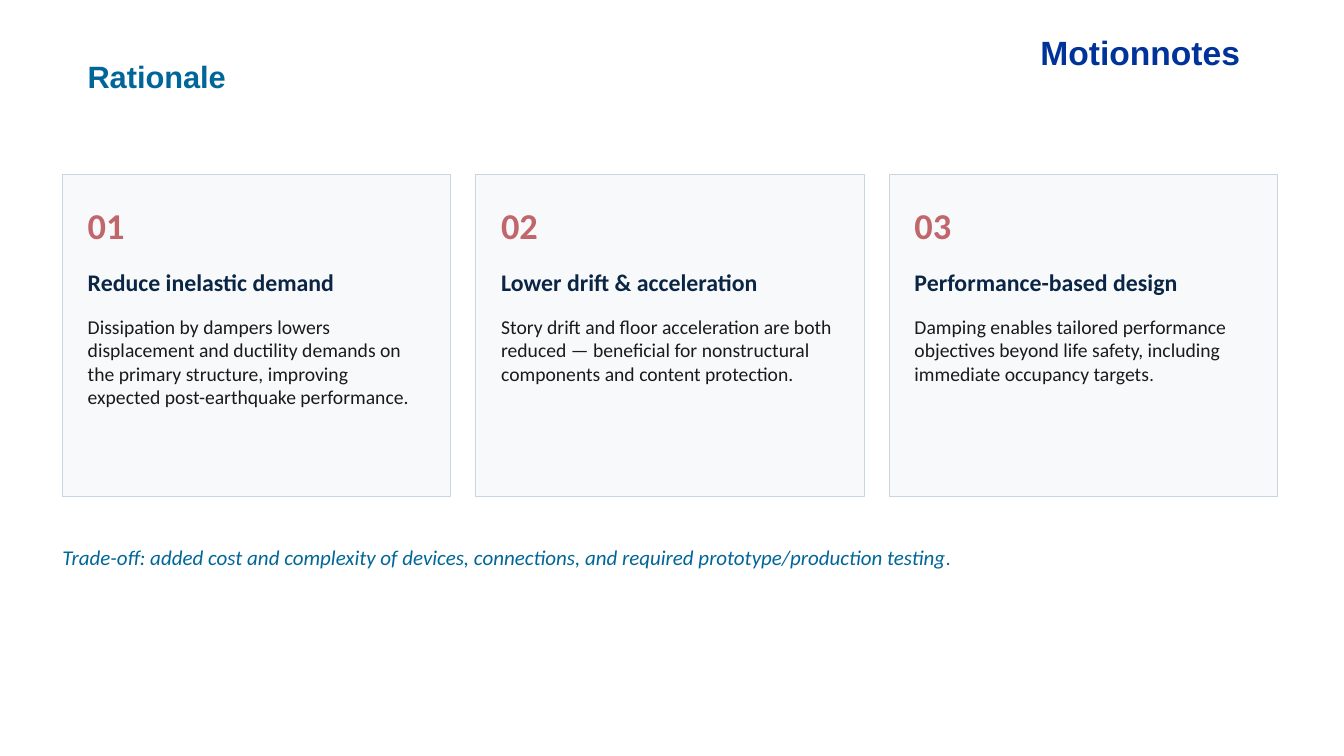
from pptx import Presentation
from pptx.dml.color import RGBColor
from pptx.enum import shapes, text
from pptx.util import Inches, Pt

NAVY = RGBColor(0x00, 0x33, 0x99)
TEAL = RGBColor(0x00, 0x66, 0x99)
ROSE = RGBColor(0xC1, 0x66, 0x6B)
INK = RGBColor(0x0B, 0x25, 0x45)
BODY = RGBColor(0x1A, 0x1A, 0x1A)
PALE = RGBColor(0xF7, 0xF9, 0xFB)
EDGE = RGBColor(0xC9, 0xD6, 0xDF)

TOP = text.MSO_ANCHOR.TOP
MID = text.MSO_ANCHOR.MIDDLE

deck = Presentation()
deck.slide_width, deck.slide_height = Inches(13.33), Inches(7.5)
slide = deck.slides.add_slide(deck.slide_layouts[6])


def write(spot, runs, color, face="Calibri", anchor=MID, **style):
    """Add a text box at spot; runs holds (words, point size) pairs."""
    box = slide.shapes.add_textbox(*map(Inches, spot))
    frame = box.text_frame
    frame.vertical_anchor = anchor
    frame.word_wrap = True
    for side in ("left", "right", "top", "bottom"):
        setattr(frame, f"margin_{side}", 0)
    for words, size in runs:
        run = frame.paragraphs[0].add_run()
        run.text = words
        run.font.color.rgb = color
        for key, value in {"name": face, "size": Pt(size), **style}.items():
            setattr(run.font, key, value)
    return frame


heads = [
    ((10.22, 0.27, 2.35, 0.5), "Motionnotes", 24, NAVY),
    ((0.77, 0.52, 1.59, 0.47), "Rationale", 22, TEAL),
]
for spot, words, size, color in heads:
    frame = write(spot, [(words, size)], color, "Arial", TOP, bold=True)
    frame.word_wrap = False
    frame.auto_size = text.MSO_AUTO_SIZE.SHAPE_TO_FIT_TEXT
    frame.margin_left = frame.margin_right = Inches(0.1)
    frame.margin_top = frame.margin_bottom = Inches(0.05)

cards = [
    ("Reduce inelastic demand",
     [("Dissipation by dampers lowers displacement and ductility demands on "
       "the primary structure, improving expected post-earthquake performance.", 14)]),
    ("Lower drift & acceleration",
     [("Story drift and floor acceleration are both reduced — beneficial for "
       "nonstructural components and content protection.", 14)]),
    ("Performance-based design",
     [("Damping enables tailored performance objectives beyond life safety, "
       "including immediate occupancy targets", 14), (".", 13)]),
]
LEFT, WIDTH, GAP, PAD = 0.62, 3.85, 0.25, 0.25
for index, (title, body) in enumerate(cards):
    x = LEFT + index * (WIDTH + GAP)
    card = slide.shapes.add_shape(
        shapes.MSO_SHAPE.RECTANGLE, Inches(x), Inches(1.73), Inches(WIDTH), Inches(3.2))
    card.shadow.inherit = False
    card.fill.solid()
    card.fill.fore_color.rgb = PALE
    card.line.color.rgb = EDGE
    card.line.width = Pt(0.75)
    x += PAD
    inner = WIDTH - 2 * PAD
    write((x, 1.98, 1, 0.5), [(f"{index + 1:02}", 26)], ROSE, bold=True)
    write((x, 2.52, inner, 0.55), [(title, 17)], INK, bold=True)
    write((x, 3.12, inner, 1.65), body, BODY, anchor=TOP)

write((LEFT, 5.28, 12.1, 0.5),
      [("Trade-off: added cost and complexity of devices, connections, and "
        "required prototype/production testing", 15), (".", 14)], TEAL, italic=True)

deck.save("out.pptx")
